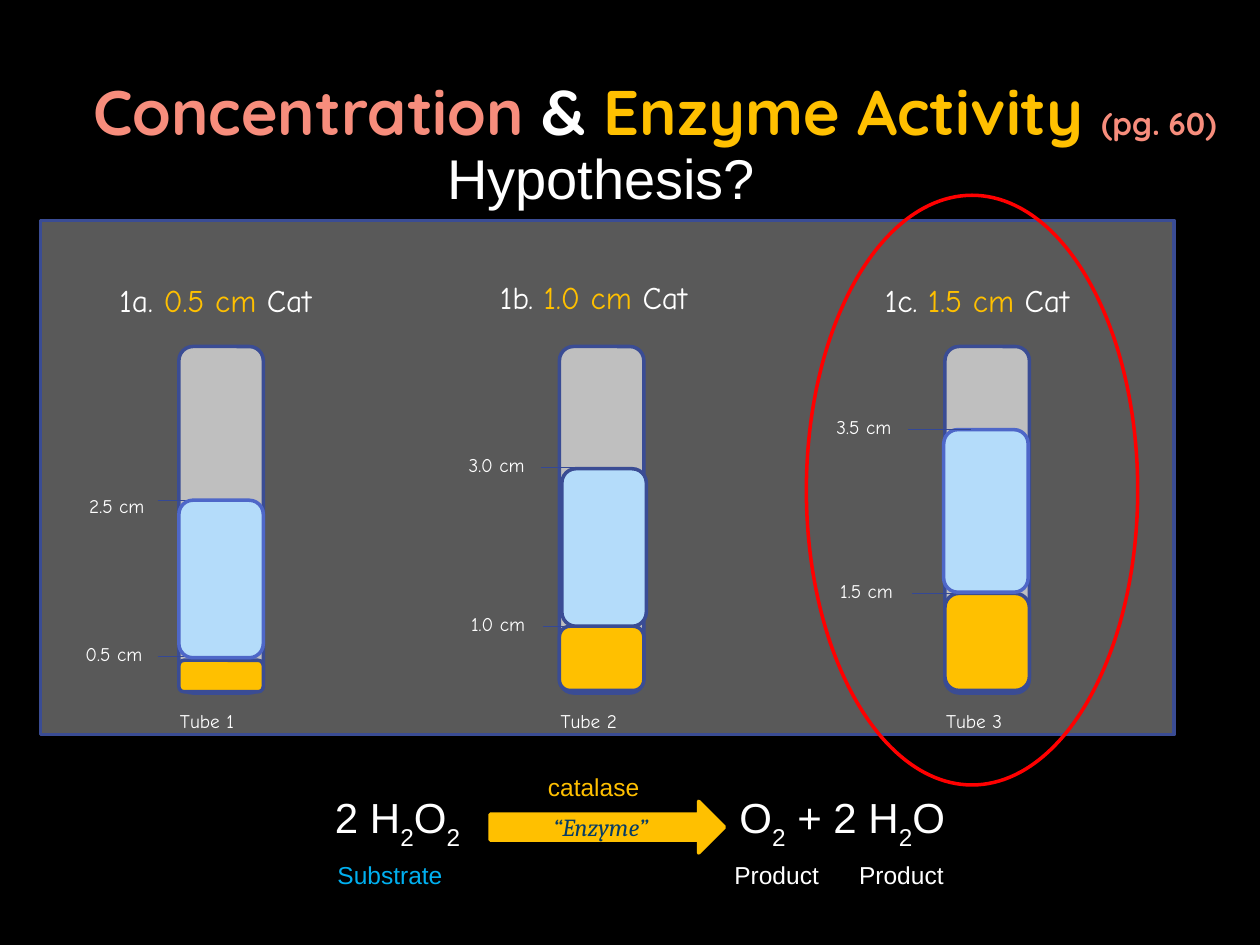
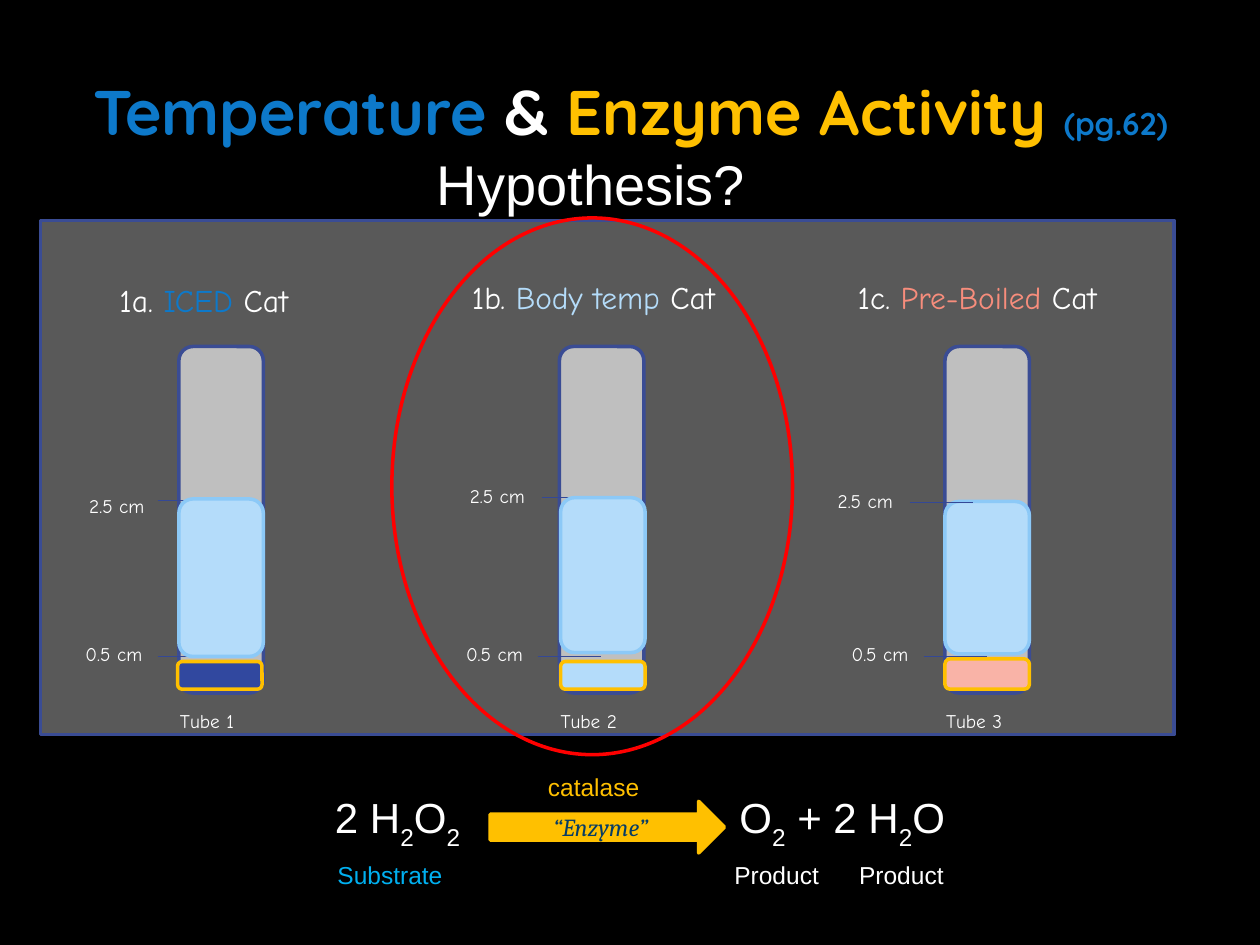
from collections import namedtuple

from lxml import etree
from pptx import Presentation
from pptx import util as u
from pptx.dml.color import RGBColor
from pptx.enum import shapes, text
from pptx.oxml import ns

HUES = {
    "back": "000000", "panel": "595959", "edge": "3A4C94", "tick": "344896",
    "glass": "BFBFBF", "white": "FFFFFF", "gold": "FFC000", "coral": "F78D7C",
    "blue": "0D79CA", "pale": "B4DCFA", "rim": "4E67C8", "sky": "8CC9F7",
    "navy": "31489F", "pink": "F9B3A7", "cyan": "00B0F0", "ink": "073C65",
    "red": "FF0000",
}
HEAD, HAND, BODY, SERIF = "Quicksand", "Comic Neue", "Arial", "Cambria"
WIDE, HIGH = u.Inches(10), u.Inches(7.5)
COL, ROW = WIDE / 100, HIGH / 75
LEFT, MID = text.PP_ALIGN.LEFT, text.PP_ALIGN.CENTER
FORM = shapes.MSO_SHAPE

Box = namedtuple("Box", "x y w h")
Layer = namedtuple("Layer", "fill line x y h")
Mark = namedtuple("Mark", "label x y dx dy front", defaults=(0, 0, False))
Tube = namedtuple("Tube", "words head layers marks")

PANEL = Box(3.2, 17.5, 90, 40.8)
TITLE = Box(6.4, 3.6, 94.4, 10.3)
REACT = Box(25.6, 60.9, 50, 10)
LEFTS = (11, 41.2, 71.8)
GLASS_W, GLASS_H = 6.7, 27.5


def hue(name):
    return RGBColor.from_string(HUES[name])


def inner(box, x, y, w, h):
    return Box(box.x + x, box.y + y, w, h)


def emu(box):
    return (round(box.x * COL), round(box.y * ROW),
            round(box.w * COL), round(box.h * ROW))


def style(run, size, font, color, bold=False, slant=False, sub=False):
    run.font.size = u.Pt(size)
    run.font.name = font
    run.font.color.rgb = hue(color)
    run.font.bold = bold
    run.font.italic = slant
    if sub:
        run._r.get_or_add_rPr().set("baseline", "-30000")


def fill_text(frame, bits, align=LEFT, mid=False):
    frame.word_wrap = True
    frame.auto_size = text.MSO_AUTO_SIZE.NONE
    frame.vertical_anchor = (text.MSO_ANCHOR.MIDDLE if mid
                             else text.MSO_ANCHOR.TOP)
    para = frame.paragraphs[0]
    para.alignment = align
    for words, look in bits:
        run = para.add_run()
        run.text = words
        style(run, **look)


def write(slide, box, bits, align=LEFT, mid=False):
    frame = slide.shapes.add_textbox(*emu(box)).text_frame
    fill_text(frame, bits, align, mid)


def label(slide, box, words, size, font, color="white", mid=False):
    look = dict(size=size, font=font, color=color)
    write(slide, box, [(words, look)], mid=mid)


def draw(slide, form, box, fill, line):
    shape = slide.shapes.add_shape(form, *emu(box))
    shape.shadow.inherit = False
    if fill:
        shape.fill.solid()
        shape.fill.fore_color.rgb = hue(fill)
    else:
        shape.fill.background()
    shape.line.color.rgb = hue(line)
    shape.line.width = u.Pt(2)
    return shape


def draw_mark(slide, box, mark):
    x, y, w, _ = emu(inner(box, mark.x, mark.y, 5, 0))
    tick = slide.shapes.add_connector(
        shapes.MSO_CONNECTOR.STRAIGHT, x, y, x + w, y)
    tick.line.color.rgb = hue("tick")
    tick.line.width = u.Pt(0.75)
    etree.SubElement(tick.element.spPr, ns.qn("a:effectLst"))
    spot = inner(box, mark.x - 6.7 + mark.dx, mark.y - 1.6 + mark.dy, 7.2, 2.9)
    label(slide, spot, mark.label, 11, HAND)


def draw_tube(slide, box, tube, name):
    draw(slide, FORM.ROUNDED_RECTANGLE, box, "glass", "edge")
    for mark in tube.marks:
        if not mark.front:
            draw_mark(slide, box, mark)
    for fill, line, x, y, h in tube.layers:
        draw(slide, FORM.ROUNDED_RECTANGLE,
             inner(box, x, y, box.w, h), fill, line)
    for mark in tube.marks:
        if mark.front:
            draw_mark(slide, box, mark)
    label(slide, inner(box, -0.9, 28.3, 7.5, 2.9), name, 11, HAND)


def draw_panel(slide, box, tubes):
    draw(slide, FORM.RECTANGLE, box, "panel", "edge")
    for i, (left, tube) in enumerate(zip(LEFTS, tubes)):
        x, y, w = tube.head
        bits = [(words, dict(size=18, font=HAND, color=color))
                for words, color in tube.words]
        write(slide, inner(box, x, y, w, 4), bits, MID if i else LEFT)
        draw_tube(slide, inner(box, left, 10, GLASS_W, GLASS_H),
                  tube, f"Tube {i + 1}")


def draw_title(slide, box, topic, page, color):
    title = slide.shapes.title
    title.left, title.top, title.width, title.height = emu(box)
    bits = [(topic + " ", 36, color), ("& ", 36, "white"),
            ("Enzyme Activity ", 36, "gold"), (page, 18, color)]
    fill_text(title.text_frame,
              [(words, dict(size=size, font=HEAD, color=tint, bold=True))
               for words, size, tint in bits], mid=True)


def draw_react(slide, box):
    arrow = draw(slide, FORM.RIGHT_ARROW,
                 inner(box, 13.3, 2.7, 18.6, 4.1), "gold", "gold")
    look = dict(size=14, font=SERIF, color="ink", slant=True)
    fill_text(arrow.text_frame, [("“Enzyme”", look)], MID, True)
    sides = ((0, ("2 H", "2", "O", "2")),
             (32.1, ("O", "2", " + 2 H", "2", "O")))
    for x, atoms in sides:
        bits = [(atom, dict(size=24, font=BODY, color="white", sub=i % 2))
                for i, atom in enumerate(atoms)]
        write(slide, inner(box, x, 1.8, 20, 5), bits, mid=True)
    names = (("catalase", 16.9, 0, "gold"), ("Substrate", 0.2, 7, "cyan"),
             ("Product", 31.7, 7, "white"), ("Product", 41.6, 7, "white"))
    for words, x, y, color in names:
        label(slide, inner(box, x, y, 12, 3), words, 14, BODY, color, True)


def build(deck, topic, page, color, tubes, ask, ring):
    slide = deck.slides.add_slide(deck.slide_layouts[5])
    draw_title(slide, TITLE, topic, page, color)
    draw_panel(slide, PANEL, tubes)
    draw_react(slide, REACT)
    label(slide, Box(*ask, 28, 6.4), "Hypothesis?", 32, BODY)
    draw(slide, FORM.OVAL, ring, None, "red")


def heading(mark, name, color):
    return ((mark + " ", "white"), (name + " ", color), ("Cat", "white"))


LOW = Mark("0.5 cm", -1.7, 24.6)
FIRST = (LOW, Mark("2.5 cm", -1.7, 12.2, 0.3, 0.6))

DOSE = (
    Tube(heading("1a.", "0.5 cm", "gold"), (5.3, 4.3, 25),
         (Layer("gold", "edge", 0, 24.9, 2.5),
          Layer("pale", "rim", 0, 12.2, 12.5)), FIRST),
    Tube(heading("1b.", "1.0 cm", "gold"), (31.2, 4.1, 25.4),
         (Layer("gold", "edge", 0, 22.2, 5.1),
          Layer("pale", "edge", 0.2, 9.7, 12.5)),
         (Mark("1.0 cm", -1.3, 22.2), Mark("3.0 cm", -1.5, 9.6))),
    Tube(heading("1c.", "1.5 cm", "gold"), (61.5, 4.3, 25.7),
         (Layer("gold", "edge", 0, 19.6, 7.7),
          Layer("pale", "rim", -0.1, 6.6, 12.9)),
         (Mark("1.5 cm", -2.6, 19.6),
          Mark("3.5 cm", -2.9, 6.6, front=True))),
)

HEAT = (
    Tube(heading("1a.", "ICED", "blue"), (5.3, 4.3, 25),
         (Layer("pale", "sky", 0, 12.1, 12.5),
          Layer("navy", "gold", -0.1, 25, 2.2)), FIRST),
    Tube(heading("1b.", "Body temp", "pale"), (31.2, 4.1, 25.4),
         (Layer("pale", "sky", 0.1, 12, 12.3),
          Layer("pale", "gold", 0.1, 25, 2.2)),
         (LOW, Mark("2.5 cm", -1.4, 12))),
    Tube(heading("1c.", "Pre-Boiled", "coral"), (61.5, 4.1, 25.7),
         (Layer("pale", "sky", 0, 12.3, 12.1),
          Layer("pink", "gold", 0, 24.8, 2.4)),
         (LOW, Mark("2.5 cm", -2.8, 12.4, front=True))),
)


def main():
    deck = Presentation()
    deck.slide_width, deck.slide_height = WIDE, HIGH
    back = deck.slide_master.background.fill
    back.solid()
    back.fore_color.rgb = hue("back")
    build(deck, "Concentration", "(pg. 60)", "coral", DOSE,
          (34.5, 10.9), Box(64, 15.5, 26.3, 46.8))
    build(deck, "Temperature", "(pg.62)", "blue", HEAT,
          (33.7, 11.4), Box(31.1, 17.3, 31.8, 42.6))
    deck.save("out.pptx")


if __name__ == "__main__":
    main()
